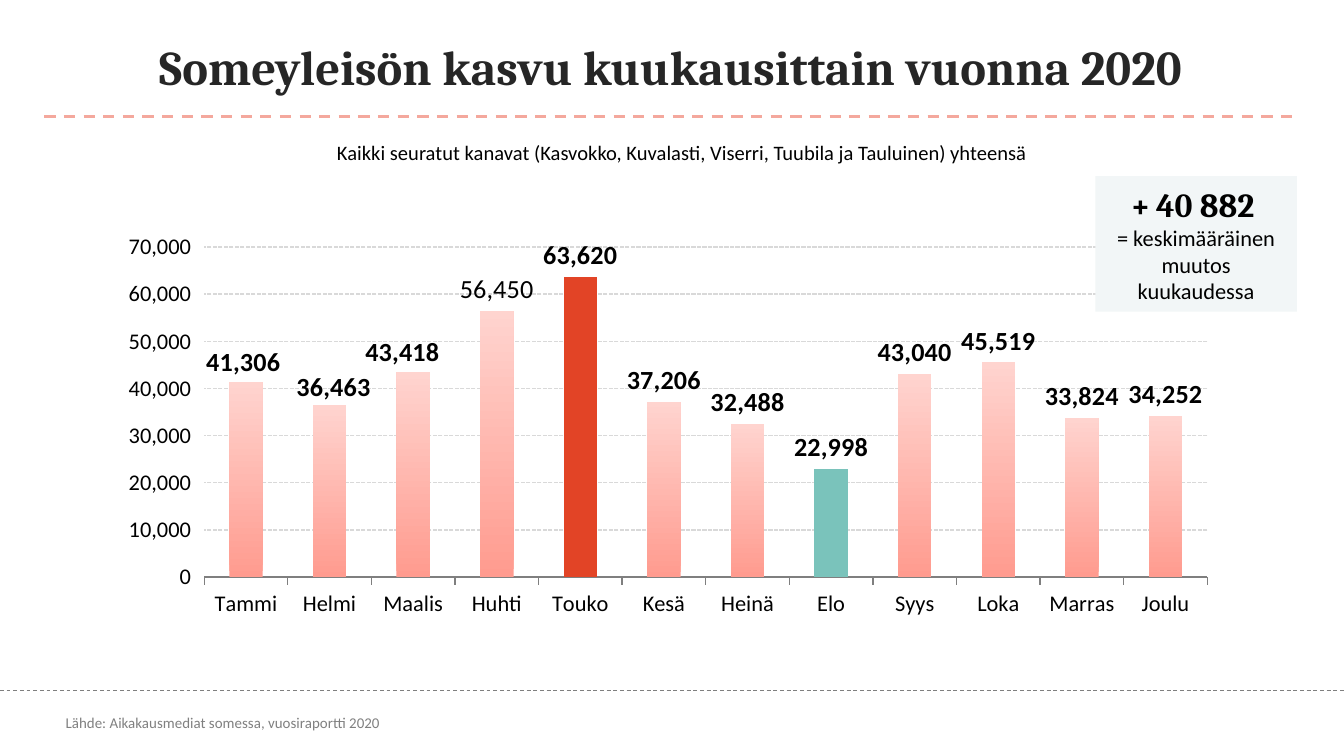
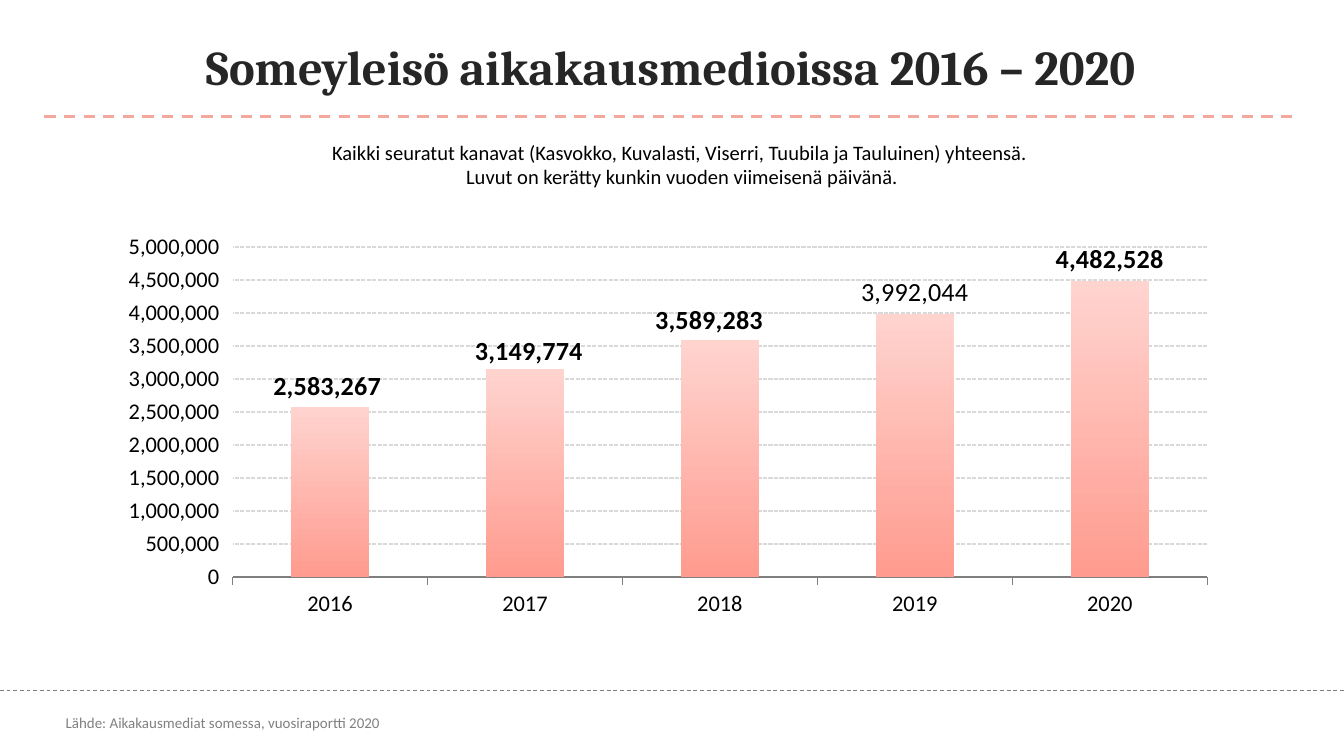
import pptx
import pptx.util
import pptx.dml.color
import pptx.chart.data
import pptx.enum.chart
import pptx.enum.dml
import pptx.enum.shapes
import pptx.enum.text
import pptx.oxml
from lxml import etree

Inches, Pt = pptx.util.Inches, pptx.util.Pt
Dash = pptx.enum.dml.MSO_LINE
Align = pptx.enum.text.PP_ALIGN
Anchor = pptx.enum.text.MSO_ANCHOR
qn = pptx.oxml.ns.qn

HEX = {
    "title": "262626", "text": "000000", "note": "808080",
    "rule": "F4A89D", "foot": "7F7F7F", "grid": "D9D9D9",
    "badge": "F2F6F7", "low": "FF9B8F", "top": "FFD4CF",
    "peak": "E24426", "dip": "7AC3BB",
}
HEAD, BODY = "Cambria", "Calibri"
SOURCE = "Lähde: Aikakausmediat somessa, vuosiraportti 2020"
SITES = "Kaikki seuratut kanavat (Kasvokko, Kuvalasti, Viserri, Tuubila ja Tauluinen) yhteensä"
CHART = (0.79, 1.68, 8.36, 2.97)
# Right and down shifts, in inches, of the first three bar labels
SHIFTS = [(-0.02, 0.01), (0.03, 0.03), (-0.08, 0.01)]

SLIDES = [
    {
        "title": "Someyleisön kasvu kuukausittain vuonna 2020",
        "intro": [SITES],
        "data": {
            "Tammi": 41306, "Helmi": 36463, "Maalis": 43418, "Huhti": 56450,
            "Touko": 63620, "Kesä": 37206, "Heinä": 32488, "Elo": 22998,
            "Syys": 43040, "Loka": 45519, "Marras": 33824, "Joulu": 34252,
        },
        "max": 70000, "step": 10000,
        "marks": {"Touko": "peak", "Elo": "dip"},
        "plain": "Huhti",
        "badge": ("40 882 ", "= keskimääräinen muutos kuukaudessa"),
    },
    {
        "title": "Someyleisö aikakausmedioissa 2016 – 2020",
        "intro": [SITES + ". ", "Luvut on kerätty kunkin vuoden viimeisenä päivänä."],
        "data": {
            "2016": 2583267, "2017": 3149774, "2018": 3589283,
            "2019": 3992044, "2020": 4482528,
        },
        "max": 5000000, "step": 500000,
        "marks": {},
        "plain": "2019",
        "badge": None,
    },
]


def rgb(name):
    return pptx.dml.color.RGBColor.from_string(HEX[name])


def style(font, size, face=BODY, color="text", bold=False):
    font.size, font.name, font.bold = Pt(size), face, bold
    font.color.rgb = rgb(color)


def add_run(para, text, *look, **more):
    run = para.add_run()
    run.text = text
    style(run.font, *look, **more)
    return run


def add_box(slide, spot, align=Align.CENTER, wrap=True, anchor=Anchor.TOP):
    """Add a text box and return its first paragraph."""
    frame = slide.shapes.add_textbox(*map(Inches, spot)).text_frame
    frame.word_wrap, frame.vertical_anchor = wrap, anchor
    para = frame.paragraphs[0]
    para.alignment = align
    return para


def add_rule(slide, left, right, y, color, width):
    rule = slide.shapes.add_connector(
        pptx.enum.shapes.MSO_CONNECTOR.STRAIGHT,
        Inches(left), Inches(y), Inches(right), Inches(y))
    rule.line.color.rgb = rgb(color)
    rule.line.width = Pt(width)
    rule.line.dash_style = Dash.DASH
    etree.SubElement(rule._element.spPr, qn("a:effectLst"))


def add_frame(slide, title, intro):
    """Add what every slide shares: footer, title, rule and intro."""
    add_rule(slide, 0, 10, 5.14, "foot", 0.5)
    note = add_box(slide, (0.39, 5.26, 2.57, 0.24), Align.LEFT, wrap=False)
    add_run(note, SOURCE, 8, color="note")
    head = add_box(slide, (0.18, 0, 9.63, 0.99), anchor=Anchor.MIDDLE)
    add_run(head, title, 26, HEAD, "title", True)
    add_rule(slide, 0.33, 9.65, 0.87, "rule", 1.5)
    para = add_box(slide, (0.33, 0.99, 9.49, 0.11 + 0.18 * len(intro)))
    for i, line in enumerate(intro):
        if i:
            para.add_line_break()
        add_run(para, line, 11)


def style_axes(chart, top, step):
    cat, val = chart.category_axis, chart.value_axis
    for axis in (cat, val):
        style(axis.tick_labels.font, 12)
        axis.major_tick_mark = pptx.enum.chart.XL_TICK_MARK.OUTSIDE
        axis.minor_tick_mark = pptx.enum.chart.XL_TICK_MARK.NONE
    cat.format.line.color.rgb = rgb("foot")
    cat.has_major_gridlines = False
    val.format.line.fill.background()
    val.minimum_scale, val.maximum_scale, val.major_unit = 0, top, step
    val.tick_labels.number_format = "#,##0"
    val.tick_labels.number_format_is_linked = False
    val.has_major_gridlines = True
    grid = val.major_gridlines.format.line
    grid.color.rgb = rgb("grid")
    grid.width = Pt(0.75)
    grid.dash_style = Dash.SQUARE_DOT


def paint(bars, cats, marks):
    """Fill the bars with a gradient and the marked ones with one colour."""
    fill = bars.format.fill
    fill.gradient()
    fill.gradient_angle = 90
    for stop, color in zip(fill.gradient_stops, ("low", "top")):
        stop.color.rgb = rgb(color)
    for cat, color in marks.items():
        fill = bars.points[cats.index(cat)].format.fill
        fill.solid()
        fill.fore_color.rgb = rgb(color)


def add_tags(bars, spot, text):
    """Label the bars; the one at spot gets light text."""
    out = pptx.enum.chart.XL_LABEL_POSITION.OUTSIDE_END
    tags = bars.data_labels
    tags.show_value, tags.position = True, out
    tags.number_format, tags.number_format_is_linked = "#,##0", False
    style(tags.font, 14, bold=True)
    for i in range(len(SHIFTS)):
        tag = bars.points[i].data_label
        style(tag.font, 14, bold=True)
        tag.position = out
    for node, shift in zip(tags._element.findall(qn("c:dLbl")), SHIFTS):
        layout = etree.Element(qn("c:layout"))
        node.insert(1, layout)
        manual = etree.SubElement(layout, qn("c:manualLayout"))
        for axis, move, size in zip("xy", shift, CHART[2:]):
            etree.SubElement(manual, qn("c:" + axis), val=str(move / size))
    tag = bars.points[spot].data_label
    add_run(tag.text_frame.paragraphs[0], text, 14)
    tag.position = out


def add_bars(slide, data, top, step, marks, plain):
    cats = list(data)
    table = pptx.chart.data.CategoryChartData(number_format="#,##0")
    table.categories = cats
    table.add_series("Series 1", data.values())
    chart = slide.shapes.add_chart(
        pptx.enum.chart.XL_CHART_TYPE.COLUMN_CLUSTERED,
        *map(Inches, CHART), table).chart
    style(chart.font, 18)
    chart.has_legend = chart.has_title = False
    style_axes(chart, top, step)
    plot = chart.plots[0]
    plot.gap_width, plot.vary_by_categories = 150, False
    paint(plot.series[0], cats, marks)
    add_tags(plot.series[0], cats.index(plain), f"{data[plain]:,}")


def add_badge(slide, count, label):
    badge = slide.shapes.add_shape(
        pptx.enum.shapes.MSO_SHAPE.RECTANGLE,
        *map(Inches, (8.15, 1.31, 1.5, 1.01)))
    badge.shadow.inherit = False
    badge.fill.solid()
    badge.fill.fore_color.rgb = rgb("badge")
    badge.line.fill.background()
    badge.text_frame.word_wrap = True
    para = badge.text_frame.paragraphs[0]
    para.alignment = Align.CENTER
    plus = add_run(para, "+", 18, HEAD, bold=True)
    plus.font._element.set("spc", "300")
    add_run(para, count, 18, HEAD, bold=True)
    para.add_line_break()
    add_run(para, label, 12)


def main():
    deck = pptx.Presentation()
    deck.slide_width, deck.slide_height = Inches(10), Inches(10 * 9 / 16)
    for page in SLIDES:
        slide = deck.slides.add_slide(deck.slide_layouts[6])
        add_frame(slide, page["title"], page["intro"])
        add_bars(slide, page["data"], page["max"], page["step"],
                 page["marks"], page["plain"])
        if page["badge"]:
            add_badge(slide, *page["badge"])
    deck.save("out.pptx")


if __name__ == "__main__":
    main()
